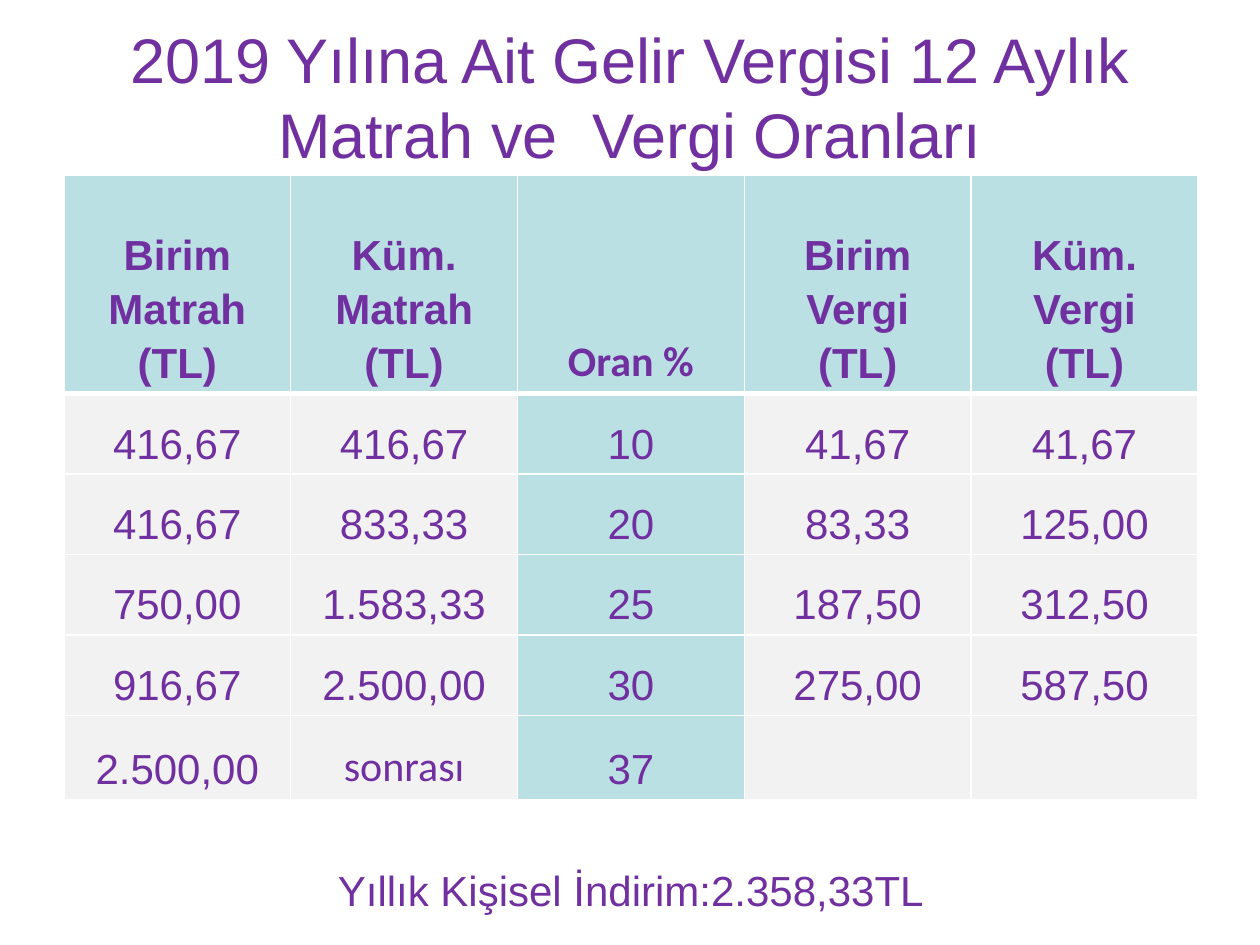
from dataclasses import dataclass

from lxml.etree import SubElement
from pptx import Presentation
from pptx.dml.color import RGBColor
from pptx.enum.text import MSO_ANCHOR, PP_ALIGN
from pptx.oxml.ns import qn
from pptx.util import Pt


@dataclass(frozen=True)
class Theme:
    text: str = "7030A0"
    accent_fill: str = "BBE0E3"
    body_fill: str = "F2F2F2"
    border: str = "FFFFFF"
    font: str = "Arial"
    alternate_font: str = "Calibri"
    title_size: int = 36
    body_size: int = 24


THEME = Theme()
TITLE = "2019 Yılına Ait Gelir Vergisi 12 Aylık Matrah ve  Vergi Oranları"
ALLOWANCE = "Yıllık Kişisel İndirim:2.358,33TL"
TAX_BRACKETS = [
    ["Birim Matrah\n(TL)", "Küm. Matrah (TL)", "Oran %", "Birim Vergi (TL)", "Küm.\nVergi (TL)"],
    ["416,67", "416,67", "10", "41,67", "41,67"],
    ["416,67", "833,33", "20", "83,33", "125,00"],
    ["750,00", "1.583,33", "25", "187,50", "312,50"],
    ["916,67", "2.500,00", "30", "275,00", "587,50"],
    ["2.500,00", "sonrası", "37", "", ""],
]
ALTERNATE_FONT_TEXTS = {"Oran %", "sonrası"}
RATE_COLUMN = 2
LEFT, WIDTH = 36.5, 648
COLUMN_WIDTH = WIDTH / len(TAX_BRACKETS[0])
ROW_HEIGHTS = [125, 46, 46, 46, 46, 48]


def write_text(text_frame, text, size, bold=False, line_spacing=None):
    text_frame.word_wrap = True
    text_frame.text = text
    for paragraph in text_frame.paragraphs:
        paragraph.alignment = PP_ALIGN.CENTER
        paragraph.line_spacing = line_spacing
        font = paragraph.font
        font.name = THEME.alternate_font if text in ALTERNATE_FONT_TEXTS else THEME.font
        font.size = Pt(size)
        font.bold = bold
        font.color.rgb = RGBColor.from_string(THEME.text)


def place(shape, left, top, width, height):
    shape.left, shape.top = Pt(left), Pt(top)
    shape.width, shape.height = Pt(width), Pt(height)


def add_title(slide):
    title = slide.shapes.title
    place(title, 36, 9.5, WIDTH, 90.5)
    title.text_frame.vertical_anchor = MSO_ANCHOR.MIDDLE
    write_text(title.text_frame, TITLE, THEME.title_size)


def add_allowance(slide):
    box = slide.shapes.add_textbox(Pt(LEFT), Pt(463), Pt(WIDTH), Pt(90.5))
    box.text_frame.vertical_anchor = MSO_ANCHOR.MIDDLE
    write_text(box.text_frame, ALLOWANCE, THEME.body_size)


def set_borders(cell, top, bottom):
    """Draw all four cell borders; top and bottom widths are in points."""
    properties = cell._tc.get_or_add_tcPr()
    for side, width in (("lnL", 1), ("lnR", 1), ("lnT", top), ("lnB", bottom)):
        line = SubElement(properties, qn(f"a:{side}"), w=str(Pt(width)))
        fill = SubElement(line, qn("a:solidFill"))
        SubElement(fill, qn("a:srgbClr"), val=THEME.border)


def format_cell(cell, text, row, column):
    is_header = row == 0
    set_borders(cell, top=3 if row == 1 else 1, bottom=3 if is_header else 1)
    is_accent = is_header or column == RATE_COLUMN
    cell.fill.solid()
    cell.fill.fore_color.rgb = RGBColor.from_string(
        THEME.accent_fill if is_accent else THEME.body_fill)
    cell.vertical_anchor = MSO_ANCHOR.BOTTOM
    cell.margin_left = cell.margin_right = Pt(15)
    cell.margin_top = cell.margin_bottom = Pt(3.6)
    if text:
        write_text(cell.text_frame, text, THEME.body_size, is_header, line_spacing=1.15)


def add_tax_table(slide):
    frame = slide.shapes.add_table(
        len(TAX_BRACKETS), len(TAX_BRACKETS[0]),
        Pt(LEFT), Pt(100), Pt(WIDTH), Pt(sum(ROW_HEIGHTS)))
    table = frame.table
    table.horz_banding = False
    for column in table.columns:
        column.width = Pt(COLUMN_WIDTH)
    for row_index, values in enumerate(TAX_BRACKETS):
        table.rows[row_index].height = Pt(ROW_HEIGHTS[row_index])
        for column_index, text in enumerate(values):
            format_cell(table.cell(row_index, column_index), text, row_index, column_index)


def main():
    presentation = Presentation()
    presentation.slide_width, presentation.slide_height = Pt(720), Pt(540)
    slide = presentation.slides.add_slide(presentation.slide_layouts.get_by_name("Title Only"))
    add_title(slide)
    add_tax_table(slide)
    add_allowance(slide)
    presentation.save("out.pptx")


if __name__ == "__main__":
    main()
